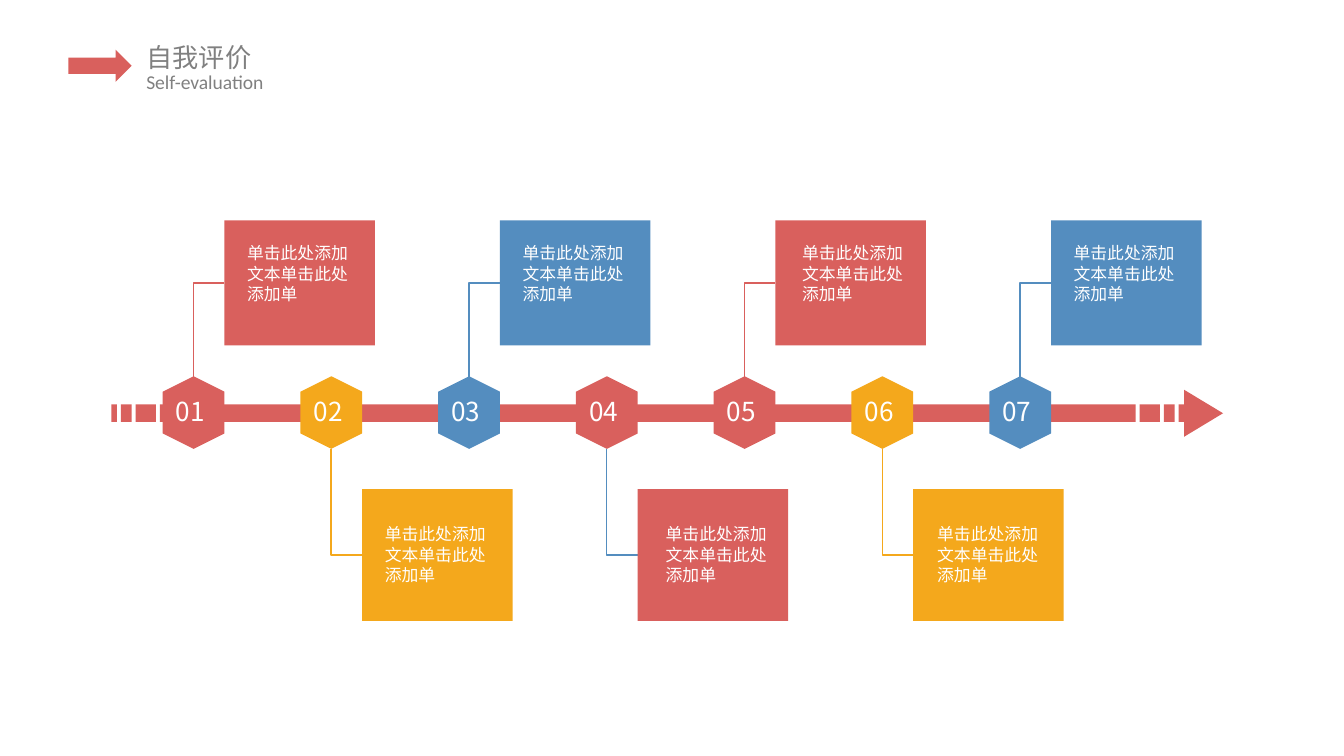
from lxml.etree import SubElement
from pptx import Presentation
from pptx.dml.color import RGBColor
from pptx.enum.shapes import MSO_CONNECTOR, MSO_SHAPE
from pptx.enum.text import MSO_ANCHOR, MSO_AUTO_SIZE, PP_ALIGN
from pptx.oxml.ns import qn
from pptx.util import Inches, Pt

# Content
RED, BLUE, GOLD = "D9605D", "548DBF", "F4A81C"
GREY, WHITE = "808080", "FFFFFF"
CJK = "Noto Sans CJK SC"
TITLE, SUB = "自我评价", "Self-evaluation"
NOTE = "单击此处添加文本单击此处添加单"
# number, fill, line colour, indent of the note in its card
STEPS = [
    ("01", RED, RED, 0.07),
    ("02", GOLD, GOLD, 0.07),
    ("03", BLUE, BLUE, 0.07),
    ("04", RED, BLUE, 0.11),
    ("05", RED, RED, 0.1),
    ("06", GOLD, GOLD, 0.08),
    ("07", BLUE, BLUE, 0.07),
]
# left, width of each piece of the axis
BARS = [(0.83, 0.04), (0.9, 0.08), (1.01, 0.15), (1.19, 7.26),
        (8.48, 0.15), (8.66, 0.08), (8.77, 0.04)]

# Layout
FIRST, LAST = 1.44, 7.59
STEP = (LAST - FIRST) / (len(STEPS) - 1)
AXIS = 3.07
HEX_W, HEX_H = 0.54, 0.46
CARD_W, GAP = 1.12, 0.23
# card top, card height, note top, end of the line at the hexagon
UPPER = (1.64, 0.93, 1.76, 2.81)
LOWER = (3.64, 0.98, 3.85, 3.34)

# Wide slide, 16 to 9
deck = Presentation()
deck.slide_width, deck.slide_height = Inches(10), Inches(10 * 9 / 16)
slide = deck.slides.add_slide(deck.slide_layouts[5])
shapes = slide.shapes


def color(code):
    return RGBColor.from_string(code)


def style(item, values):
    for name, value in values.items():
        setattr(item, name, value)


def shape(kind, x, y, w, h, fill, turn=0):
    item = shapes.add_shape(kind, *map(Inches, (x, y, w, h)))
    item.shadow.inherit = False
    item.fill.solid()
    item.fill.fore_color.rgb = color(fill)
    item.line.fill.background()
    item.rotation = turn


def write(box, text, size, ink, font=CJK, wrap=True):
    frame = box.text_frame
    style(frame, {
        "word_wrap": wrap, "auto_size": MSO_AUTO_SIZE.NONE,
        "vertical_anchor": MSO_ANCHOR.TOP,
        "margin_left": Inches(0.1), "margin_right": Inches(0.1),
        "margin_top": Inches(0.05), "margin_bottom": Inches(0.05),
    })
    para = frame.paragraphs[0]
    para.alignment = PP_ALIGN.LEFT
    run = para.add_run()
    run.text = text
    style(run.font, {"size": Pt(size), "name": font})
    run.font.color.rgb = color(ink)
    SubElement(run.font._element, qn("a:ea"), typeface=font)


def label(x, y, w, h, *args, **more):
    write(shapes.add_textbox(*map(Inches, (x, y, w, h))), *args, **more)


def elbow(x1, y1, x2, y2, ink):
    line = shapes.add_connector(MSO_CONNECTOR.ELBOW,
                                *map(Inches, (x1, y1, x2, y2)))
    line.line.color.rgb = color(ink)
    line.line.width = Pt(0.75)
    props = line._element.spPr
    props.find(qn("a:prstGeom")).set("prst", "bentConnector2")
    SubElement(props, qn("a:effectLst"))


# Heading
title = shapes.title
style(title, {"left": Inches(0.99), "top": Inches(0.26),
              "width": Inches(1), "height": Inches(0.34)})
write(title, TITLE, 14, GREY, wrap=False)
label(0.99, 0.47, 1.11, 0.28, SUB, 10.5, GREY, font="Calibri", wrap=False)
shape(MSO_SHAPE.RIGHT_ARROW, 0.51, 0.37, 0.47, 0.24, RED)

# Axis
for left, width in BARS:
    shape(MSO_SHAPE.RECTANGLE, left, 3.01, width, 0.13, RED)
shape(MSO_SHAPE.ISOSCELES_TRIANGLE, 8.78, 2.93, 0.35, 0.29, RED, 90)

# Steps: odd ones above the axis, even ones below
for i, (num, fill, ink, indent) in enumerate(STEPS):
    mid = FIRST + i * STEP
    left = mid + GAP
    top, tall, text_y, end = LOWER if i % 2 else UPPER
    elbow(left, top + tall / 2, mid, end, ink)
    shape(MSO_SHAPE.RECTANGLE, left, top, CARD_W, tall, fill)
    shape(MSO_SHAPE.HEXAGON, mid - HEX_W / 2, AXIS - HEX_H / 2,
          HEX_W, HEX_H, fill, 90)
    label(mid - 0.23, 2.89, 0.47, 0.34, num, 14, WHITE)
    label(left + indent, text_y, 1, 0.56, NOTE, 9, WHITE)

deck.save("out.pptx")
